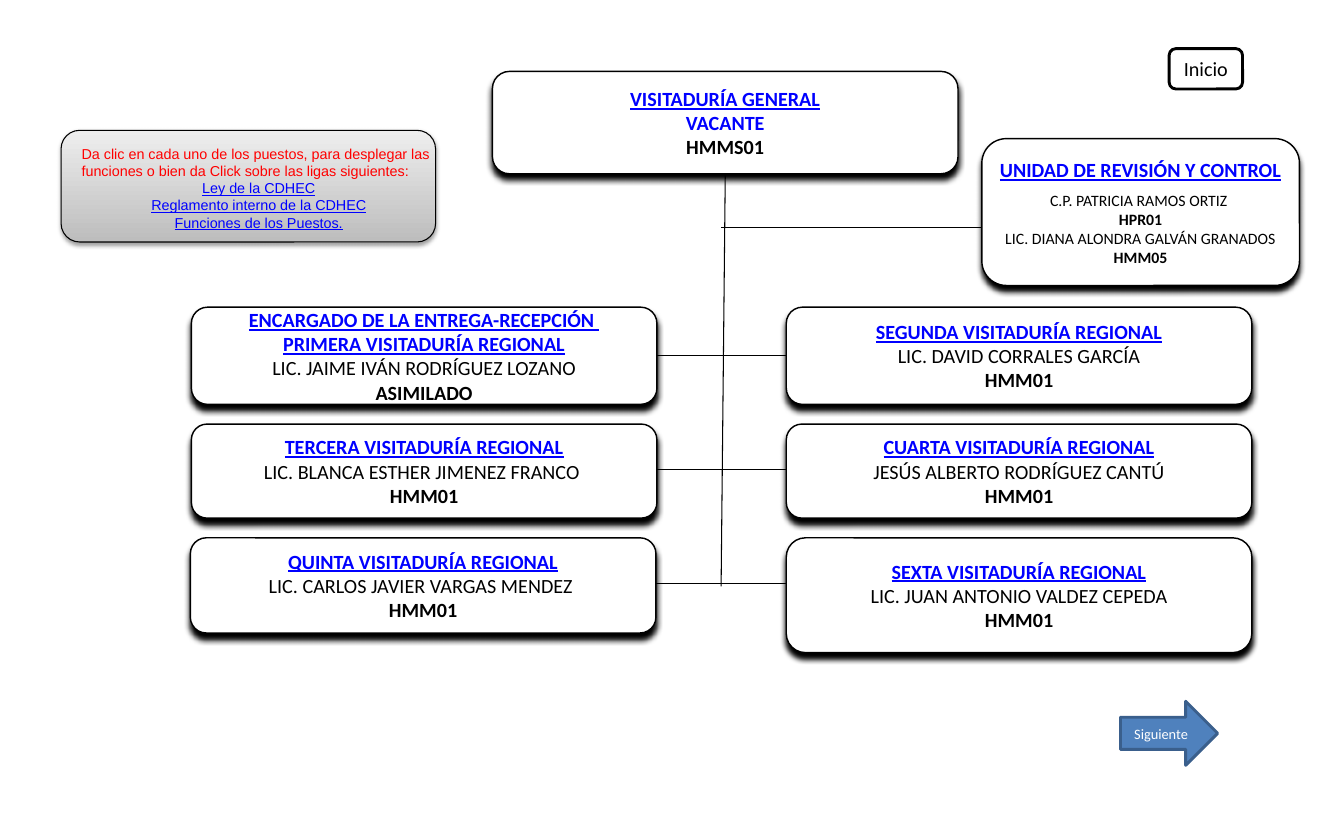
"""Build the organisation chart of the Visitaduría General."""
from lxml import etree
from pptx import Presentation
from pptx.dml.color import RGBColor
from pptx.enum.shapes import MSO_CONNECTOR, MSO_SHAPE
from pptx.enum.text import MSO_ANCHOR, MSO_AUTO_SIZE, PP_ALIGN
from pptx.oxml.ns import qn
from pptx.util import Inches, Pt

ROUND = MSO_SHAPE.ROUNDED_RECTANGLE
ARROW = MSO_SHAPE.RIGHT_ARROW
LINE = MSO_CONNECTOR.STRAIGHT
MIDDLE = MSO_ANCHOR.MIDDLE
CENTER, LEFT = PP_ALIGN.CENTER, PP_ALIGN.LEFT
GROW = MSO_AUTO_SIZE.SHAPE_TO_FIT_TEXT

CELL = Inches(0.1)
COLS, ROWS = 129.9, 78.8

THEME = {
    "black": "000000", "white": "FFFFFF", "blue": "4F81BD", "navy": "3A5F8C",
    "dark": "BDBDBD", "light": "EEEEEE",
    "text": {
        "link": ("Calibri", 14, "0000FF", True, True),
        "open": ("Calibri", 14, "0000FF", True, False),
        "name": ("Calibri", 14, "000000", False, False),
        "code": ("Calibri", 14, "000000", True, False),
        "staff": ("Calibri", 11, "000000", False, False),
        "post": ("Calibri", 11, "000000", True, False),
        "hint": ("Arial", 10, "FF0000", False, False),
        "law": ("Arial", 10, "0000FF", False, True),
        "next": ("Calibri", 10, "FFFFFF", False, False),
    },
}


def draw(kind, place, fill, edge, width, shade=None):
    """Add a shape placed in grid cells, with an optional drop shadow."""
    shape = slide.shapes.add_shape(kind, *[int(n * CELL) for n in place])
    shape.shadow.inherit = False
    shape.fill.solid()
    shape.fill.fore_color.rgb = RGBColor.from_string(THEME[fill])
    shape.line.color.rgb = RGBColor.from_string(THEME[edge])
    shape.line.width = Pt(width)
    if shade:
        blur, drop, alpha = shade
        effects = shape._element.spPr.find(qn("a:effectLst"))
        outer = etree.SubElement(effects, qn("a:outerShdw"), blurRad=str(Pt(blur)),
                                 dist=str(Pt(drop)), dir="5400000", rotWithShape="0")
        color = etree.SubElement(outer, qn("a:srgbClr"), val=THEME["black"])
        etree.SubElement(color, qn("a:alpha"), val=str(alpha * 1000))
    return shape


def write(frame, lines):
    """Fill a text frame with one styled run per paragraph."""
    for i, (style, text) in enumerate(lines):
        para = frame.paragraphs[0] if i == 0 else frame.add_paragraph()
        para.alignment = LEFT if style == "hint" else CENTER
        run = para.add_run()
        run.text = text
        face, size, color, bold, under = THEME["text"][style]
        run.font.name, run.font.size = face, Pt(size)
        run.font.bold, run.font.underline = bold, under
        run.font.color.rgb = RGBColor.from_string(color)


deck = Presentation()
deck.slide_width, deck.slide_height = int(COLS * CELL), int(ROWS * CELL)
slide = deck.slides.add_slide(deck.slide_layouts[6])

TRUNK = 69.7
WEST, EAST, WIDE = 18.5, 76, 45
links = [(70.1, 16.9, TRUNK, 56.7), (TRUNK, 22, 96.5, 22)]
links += [(58.5, row, 81.5, row) for row in (34.4, 45.4, 56.4)]
for ends in links:
    link = slide.shapes.add_connector(LINE, *[int(n * CELL) for n in ends])
    link.line.color.rgb = RGBColor.from_string(THEME["black"])
    link.line.width = Pt(0.75)
    etree.SubElement(link._element.spPr, qn("a:effectLst"))

boxes = [
    ((47.6, 6.9, WIDE, 9.9), [
        ("link", "VISITADURÍA GENERAL"), ("open", "VACANTE"), ("code", "HMMS01")]),
    ((EAST, 29.7, WIDE, 9.4), [
        ("link", "SEGUNDA VISITADURÍA REGIONAL"),
        ("name", "LIC. DAVID CORRALES GARCÍA"), ("code", "HMM01")]),
    ((WEST, 29.7, WIDE, 9.4), [
        ("link", "ENCARGADO DE LA ENTREGA-RECEPCIÓN "),
        ("link", "PRIMERA VISITADURÍA REGIONAL"),
        ("name", "LIC. JAIME IVÁN RODRÍGUEZ LOZANO"), ("code", "ASIMILADO")]),
    ((WEST, 41, WIDE, 9.1), [
        ("link", "TERCERA VISITADURÍA REGIONAL"),
        ("name", "LIC. BLANCA ESTHER JIMENEZ FRANCO "), ("code", "HMM01")]),
    ((EAST, 41, WIDE, 9.1), [
        ("link", "CUARTA VISITADURÍA REGIONAL"),
        ("name", "JESÚS ALBERTO RODRÍGUEZ CANTÚ"), ("code", "HMM01")]),
    ((WEST - 0.1, 52, WIDE, 9.2), [
        ("link", "QUINTA VISITADURÍA REGIONAL"),
        ("name", "LIC. CARLOS JAVIER VARGAS MENDEZ "), ("code", "HMM01")]),
    ((EAST, 52, WIDE, 11.1), [
        ("link", "SEXTA VISITADURÍA REGIONAL"),
        ("name", "LIC. JUAN ANTONIO VALDEZ CEPEDA"), ("code", "HMM01")]),
    ((94.9, 13.4, 30.7, 14.2), [
        ("link", "UNIDAD DE REVISIÓN Y CONTROL"),
        ("staff", "C.P. PATRICIA RAMOS ORTIZ "), ("post", "HPR01"),
        ("staff", "LIC. DIANA ALONDRA GALVÁN GRANADOS"), ("post", "HMM05")]),
]
for place, lines in boxes:
    box = draw(ROUND, place, "white", "black", 1, (4, 4, 100))
    frame = box.text_frame
    frame.word_wrap = False
    frame.vertical_anchor = MIDDLE
    frame.margin_left = frame.margin_right = Inches(0.17)
    frame.margin_top = frame.margin_bottom = Inches(0.09)
    write(frame, lines)
frame.paragraphs[0].space_after = Pt(6)

buttons = [
    (ROUND, (113, 4.7, 7.1, 3.9), "white", "black", ("name", "Inicio")),
    (ARROW, (108.3, 67.8, 9.4, 6.2), "blue", "navy", ("next", "Siguiente")),
]
for kind, place, fill, edge, label in buttons:
    button = draw(kind, place, fill, edge, 2)
    button.text_frame.vertical_anchor = MIDDLE
    write(button.text_frame, [label])

panel = draw(ROUND, (5.9, 12.6, 36.2, 10.8), "light", "black", 0.75, (3.1, 1.6, 38))
panel.fill.gradient()
panel.fill.gradient_angle = 90
for stop, tone in zip(panel.fill.gradient_stops, ("dark", "light")):
    stop.color.rgb = RGBColor.from_string(THEME[tone])

note = slide.shapes.add_textbox(*[int(n * CELL) for n in (6.9, 13.5, 36.2, 9.4)])
note.text_frame.word_wrap = True
note.text_frame.auto_size = GROW
write(note.text_frame, [
    ("hint", "Da clic en cada uno de los puestos, para desplegar las funciones "
             "o bien da Click sobre las ligas siguientes:"),
    ("law", "Ley de la CDHEC"),
    ("law", "Reglamento interno de la CDHEC"),
    ("law", "Funciones de los Puestos."),
])

deck.save("out.pptx")
